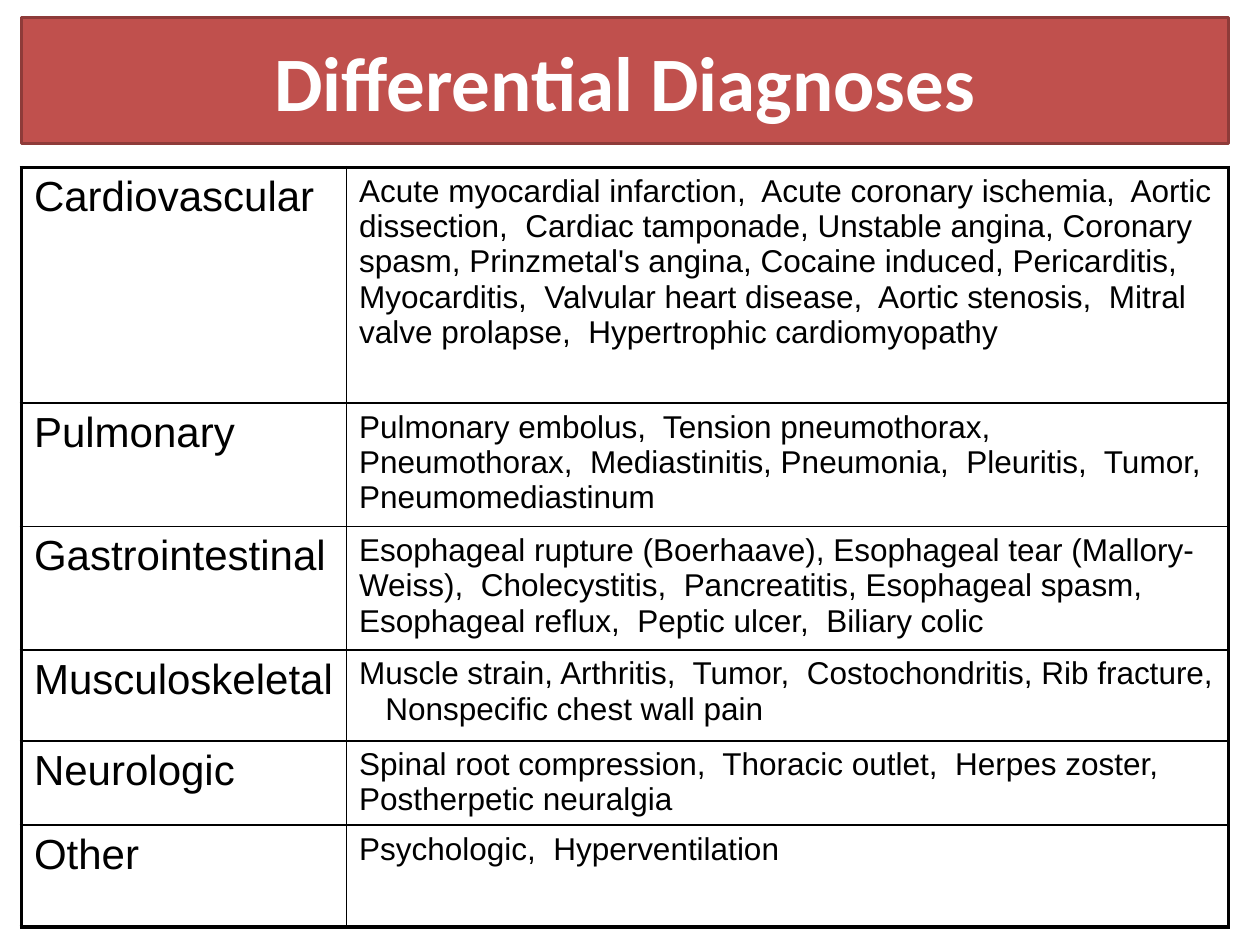
from lxml.etree import SubElement
from pptx import Presentation
from pptx.dml.color import RGBColor
from pptx.enum.shapes import MSO_SHAPE
from pptx.enum.text import MSO_ANCHOR, PP_ALIGN
from pptx.oxml.ns import qn
from pptx.util import Inches, Pt

COLORS = {"red": "C0504D", "edge": "8E3B39", "white": "FFFFFF", "black": "000000"}
LEFT, WIDTH = 0.17, 9.58
COLS = [2.58, 7]
THIN, THICK = 1, 2.25

# Group, findings, row height
ROWS = [
    ("Cardiovascular",
     "Acute myocardial infarction,  Acute coronary ischemia,  Aortic dissection,  "
     "Cardiac tamponade, Unstable angina, Coronary spasm, Prinzmetal's angina, "
     "Cocaine induced, Pericarditis, Myocarditis,  Valvular heart disease,  "
     "Aortic stenosis,  Mitral valve prolapse,  Hypertrophic cardiomyopathy", 1.87),
    ("Pulmonary",
     "Pulmonary embolus,  Tension pneumothorax,  Pneumothorax,  Mediastinitis, "
     "Pneumonia,  Pleuritis,  Tumor, Pneumomediastinum", 0.98),
    ("Gastrointestinal",
     "Esophageal rupture (Boerhaave), Esophageal tear (Mallory-Weiss),  "
     "Cholecystitis,  Pancreatitis, Esophageal spasm,  Esophageal reflux,  "
     "Peptic ulcer,  Biliary colic", 0.98),
    ("Musculoskeletal",
     "Muscle strain, Arthritis,  Tumor,  Costochondritis, Rib fracture,    "
     "Nonspecific chest wall pain", 0.72),
    ("Neurologic",
     "Spinal root compression,  Thoracic outlet,  Herpes zoster,  "
     "Postherpetic neuralgia", 0.67),
    ("Other", "Psychologic,  Hyperventilation", 0.81),
]


def color(name):
    return RGBColor.from_string(COLORS[name])


def style(frame, font, size, tint, bold=False):
    for run in frame.paragraphs[0].runs:
        run.font.name = font
        run.font.size = Pt(size)
        run.font.bold = bold
        run.font.color.rgb = color(tint)


def add_title(slide, text):
    box = slide.shapes.add_shape(MSO_SHAPE.RECTANGLE, Inches(LEFT), Inches(0.14),
                                 Inches(WIDTH), Inches(1))
    box.shadow.inherit = False
    box.fill.solid()
    box.fill.fore_color.rgb = color("red")
    box.line.color.rgb = color("edge")
    box.line.width = Pt(2)
    frame = box.text_frame
    frame.text = text
    frame.vertical_anchor = MSO_ANCHOR.MIDDLE
    frame.paragraphs[0].alignment = PP_ALIGN.CENTER
    style(frame, "Calibri", 44, "white", bold=True)


def set_edges(cell, outer):
    """Draw the cell borders: thick on the sides flagged as outer, else thin."""
    props = cell._tc.get_or_add_tcPr()
    for index, (side, thick) in enumerate(outer.items()):
        line = props.makeelement(qn(f"a:ln{side}"),
                                 {"w": str(Pt(THICK if thick else THIN))})
        fill = SubElement(line, qn("a:solidFill"))
        SubElement(fill, qn("a:srgbClr"), val=COLORS["black"])
        props.insert(index, line)


def add_grid(slide):
    height = sum(row[2] for row in ROWS)
    table = slide.shapes.add_table(len(ROWS), len(COLS), Inches(LEFT), Inches(1.33),
                                   Inches(WIDTH), Inches(height)).table
    table.first_row = table.horz_banding = False
    for col, width in zip(table.columns, COLS):
        col.width = Inches(width)
    for r, (group, items, tall) in enumerate(ROWS):
        table.rows[r].height = Inches(tall)
        for c, (text, size) in enumerate([(group, 24), (items, 18)]):
            cell = table.cell(r, c)
            cell.fill.background()
            cell.text_frame.text = text
            style(cell.text_frame, "Arial", size, "black")
            set_edges(cell, {"L": c == 0, "R": c == len(COLS) - 1,
                             "T": r == 0, "B": r == len(ROWS) - 1})


def main():
    deck = Presentation()
    deck.slide_width, deck.slide_height = Inches(10), Inches(7.5)
    slide = deck.slides.add_slide(deck.slide_layouts[6])
    add_title(slide, "Differential Diagnoses")
    add_grid(slide)
    deck.save("out.pptx")


if __name__ == "__main__":
    main()
